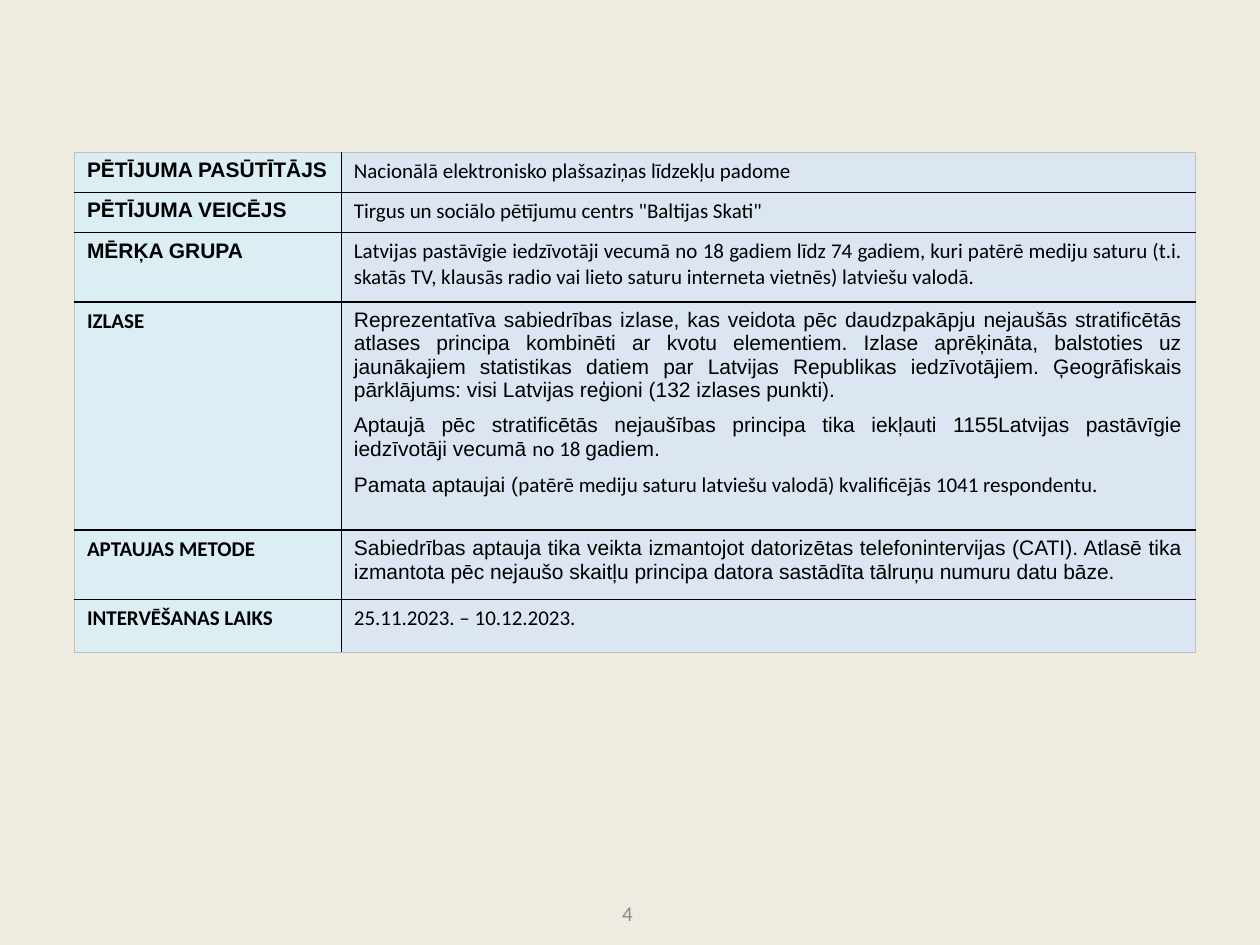
from lxml import etree
from pptx import Presentation
from pptx.dml.color import RGBColor as Rgb
from pptx.enum.text import PP_ALIGN as Align
from pptx.oxml.ns import qn
from pptx.util import Cm, Pt

COLORS = {
    "page": "EEECE1",
    "label": "DBEEF4",
    "detail": "DCE6F2",
    "text": "000000",
    "inner": "000000",
    "outer": "BFBFBF",
    "number": "898989",
}
SANS, BODY = "Arial", "Calibri"
COLUMN_WIDTHS = [5.38, 17.22]
LEFT, JUSTIFIED = Align.LEFT, Align.JUSTIFY

ROWS = [
    (0.81, "PĒTĪJUMA PASŪTĪTĀJS", SANS, JUSTIFIED,
     [[("Nacionālā elektronisko plašsaziņas līdzekļu padome", BODY)]]),
    (0.81, "PĒTĪJUMA VEICĒJS", SANS, JUSTIFIED,
     [[('Tirgus un sociālo pētījumu centrs "Baltijas Skati"', BODY)]]),
    (1.4, "MĒRĶA GRUPA", SANS, JUSTIFIED,
     [[("Latvijas pastāvīgie iedzīvotāji vecumā no 18 gadiem līdz 74 gadiem, "
        "kuri patērē mediju saturu (t.i. skatās TV, klausās radio vai lieto "
        "saturu interneta vietnēs) latviešu valodā.", BODY)]]),
    (4.6, "IZLASE", BODY, JUSTIFIED,
     [[("Reprezentatīva sabiedrības izlase, kas veidota pēc daudzpakāpju "
        "nejaušās stratificētās atlases principa kombinēti ar kvotu elementiem. "
        "Izlase aprēķināta, balstoties uz jaunākajiem statistikas datiem par "
        "Latvijas Republikas iedzīvotājiem. Ģeogrāfiskais pārklājums: visi "
        "Latvijas reģioni (132 izlases punkti).", SANS)],
      [("Aptaujā pēc stratificētās nejaušības principa tika iekļauti "
        "1155Latvijas pastāvīgie iedzīvotāji vecumā ", SANS),
       ("no 18 ", BODY), ("gadiem.", SANS)],
      [("Pamata aptaujai (", SANS),
       ("patērē mediju saturu latviešu valodā) kvalificējās 1041 respondentu.", BODY)]]),
    (1.4, "APTAUJAS METODE", BODY, JUSTIFIED,
     [[("Sabiedrības aptauja tika veikta izmantojot datorizētas "
        "telefonintervijas (CATI). Atlasē tika izmantota pēc nejaušo skaitļu "
        "principa datora sastādīta tālruņu numuru datu bāze.", SANS)]]),
    (1.07, "INTERVĒŠANAS LAIKS", BODY, LEFT,
     [[("25.11.2023. – 10.12.2023.", BODY)]]),
]


class SlideBuilder:
    size = Pt(12)
    border = Pt(1)

    def __init__(self, deck):
        self.page = deck.slides.add_slide(deck.slide_layouts[6])
        fill = self.page.background.fill
        fill.solid()
        fill.fore_color.rgb = Rgb.from_string(COLORS["page"])

    def fill_text(self, frame, paragraphs, color="text", bold=False, align=LEFT):
        for index, spans in enumerate(paragraphs):
            para = frame.add_paragraph() if index else frame.paragraphs[0]
            para.alignment = align
            if index:
                para.space_before = Pt(6)
            para.font.size = self.size
            para.font.bold = bold
            para.font.color.rgb = Rgb.from_string(COLORS[color])
            fonts = {font for _, font in spans}
            if len(fonts) == 1:
                para.font.name = spans[0][1]
            for text, font in spans:
                span = para.add_run()
                span.text = text
                if len(fonts) > 1:
                    span.font.name = font

    def outline(self, cell, edges):
        properties = cell._tc.get_or_add_tcPr()
        for side, color in edges.items():
            line = etree.SubElement(properties, qn(f"a:ln{side}"), w=str(self.border))
            solid = etree.SubElement(line, qn("a:solidFill"))
            etree.SubElement(solid, qn("a:srgbClr"), val=COLORS[color])

    def table(self, left, top, widths, rows):
        total = sum(row[0] for row in rows)
        frame = self.page.shapes.add_table(
            len(rows), len(widths), Cm(left), Cm(top), Cm(sum(widths)), Cm(total))
        table = frame.table
        table.first_row = table.horz_banding = False
        for column, width in zip(table.columns, widths):
            column.width = Cm(width)
        for index, (height, label, font, align, details) in enumerate(rows):
            table.rows[index].height = Cm(height)
            top_edge = "inner" if index else "outer"
            bottom_edge = "inner" if index < len(rows) - 1 else "outer"
            contents = [("label", [[(label, font)]], LEFT), ("detail", details, align)]
            for position, (kind, paragraphs, alignment) in enumerate(contents):
                cell = table.cell(index, position)
                self.outline(cell, {
                    "L": "inner" if position else "outer",
                    "R": "outer" if position else "inner",
                    "T": top_edge,
                    "B": bottom_edge,
                })
                cell.fill.solid()
                cell.fill.fore_color.rgb = Rgb.from_string(COLORS[kind])
                self.fill_text(cell.text_frame, paragraphs,
                               bold=kind == "label", align=alignment)

    def text(self, left, top, width, height, words, color):
        box = self.page.shapes.add_textbox(Cm(left), Cm(top), Cm(width), Cm(height))
        box.text_frame.word_wrap = True
        self.fill_text(box.text_frame, [[(words, BODY)]], color)


def main():
    deck = Presentation()
    deck.slide_width, deck.slide_height = Cm(25.4), Cm(19.05)
    builder = SlideBuilder(deck)
    builder.table(1.5, 3.07, COLUMN_WIDTHS, ROWS)
    builder.text(12.29, 18.03, 0.81, 1.02, "4", "number")
    deck.save("out.pptx")


if __name__ == "__main__":
    main()
